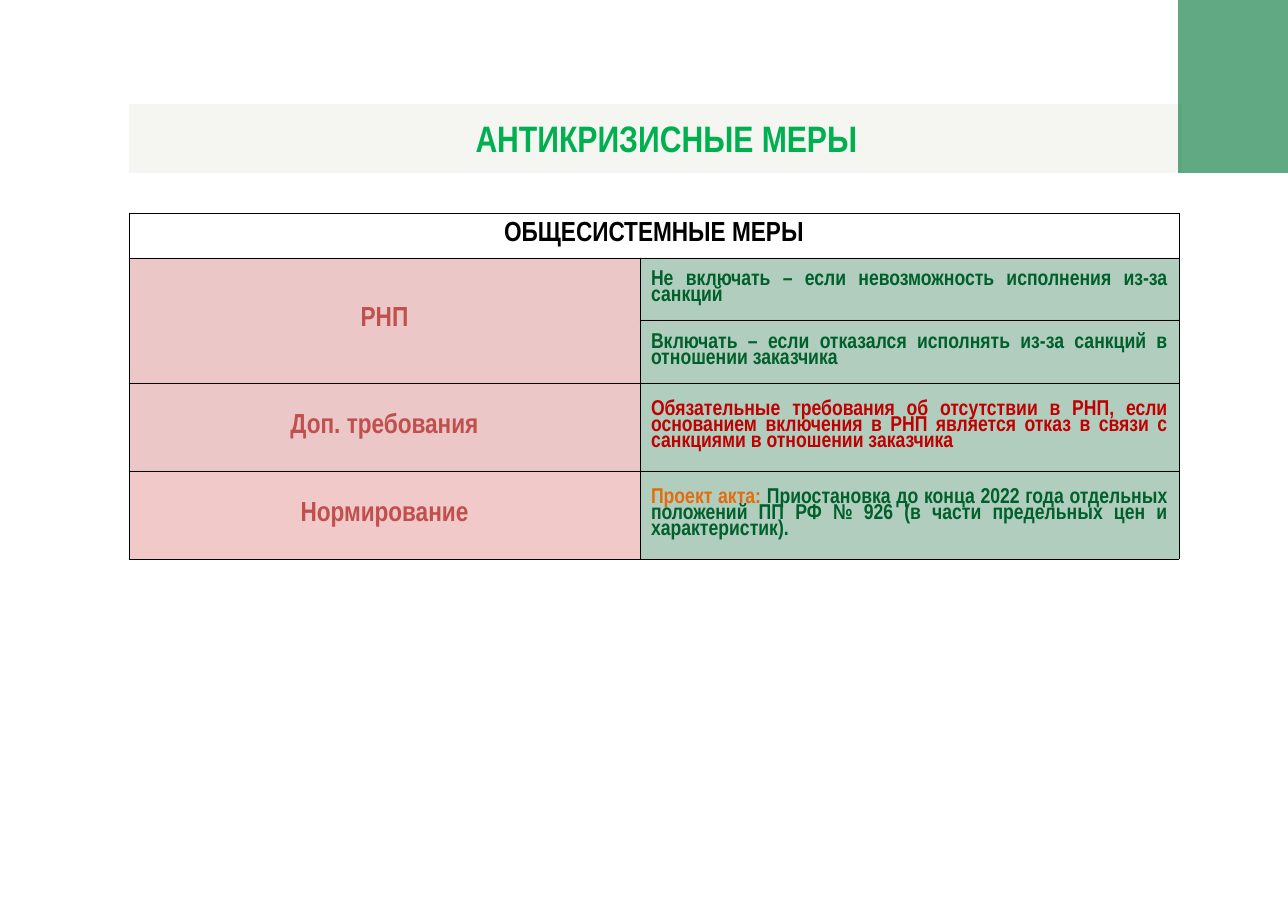
import dataclasses

import lxml.etree
import pptx
import pptx.dml.color
import pptx.enum.shapes
import pptx.enum.text
import pptx.oxml.ns
import pptx.util

ALIGN = pptx.enum.text.PP_ALIGN
qn = pptx.oxml.ns.qn


@dataclasses.dataclass(frozen=True)
class Theme:
    font: str = "Arial Narrow"
    title_size: int = 24
    label_size: int = 18
    body_size: int = 14
    border_width: float = 0.5
    line_spacing: float = 0.8
    black: str = "000000"
    band: str = "F5F6F1"
    title: str = "00B050"
    corner: str = "077A3E"
    label: str = "C0504D"
    body: str = "00602B"
    alert: str = "C00000"
    draft: str = "E46C0A"


class SlideBuilder:
    """Draws styled elements on the current slide, with lengths in px."""

    EMU_PER_PX = 8290

    def __init__(self, theme, width, height):
        self.theme = theme
        self.deck = pptx.Presentation()
        self.deck.slide_width = self.px(width)
        self.deck.slide_height = self.px(height)
        self.page = self.deck.slides.add_slide(self.deck.slide_layouts[6])

    def px(self, length):
        return pptx.util.Emu(length * self.EMU_PER_PX)

    def place(self, *lengths):
        return [self.px(length) for length in lengths]

    def paint(self, fill, properties, color, opacity):
        fill.solid()
        fill.fore_color.rgb = pptx.dml.color.RGBColor.from_string(color)
        if opacity < 100:
            tint = properties.find(qn("a:solidFill"))[0]
            alpha = lxml.etree.SubElement(tint, qn("a:alpha"))
            alpha.set("val", str(opacity * 1000))

    def rectangle(self, left, top, width, height, color, opacity=100):
        kind = pptx.enum.shapes.MSO_SHAPE.RECTANGLE
        box = self.page.shapes.add_shape(kind, *self.place(left, top, width, height))
        box.shadow.inherit = False
        box.line.fill.background()
        self.paint(box.fill, box.element.spPr, color, opacity)

    def fill_text(self, frame, spans, size, align, spacing=1.0):
        para = frame.paragraphs[0]
        para.alignment = align
        para.line_spacing = spacing
        for words, color in spans:
            span = para.add_run()
            span.text = words
            span.font.name = self.theme.font
            span.font.size = pptx.util.Pt(size)
            span.font.bold = True
            span.font.color.rgb = pptx.dml.color.RGBColor.from_string(color)

    def text(self, left, top, width, height, words, size, color):
        box = self.page.shapes.add_textbox(*self.place(left, top, width, height))
        box.text_frame.word_wrap = True
        self.fill_text(box.text_frame, [(words, color)], size, ALIGN.CENTER)

    def table(self, left, top, columns, rows):
        area = self.place(left, top, sum(columns), sum(rows))
        grid = self.page.shapes.add_table(len(rows), len(columns), *area).table
        grid.first_row = grid.horz_banding = False
        for column, width in zip(grid.columns, columns):
            column.width = self.px(width)
        for row, height in zip(grid.rows, rows):
            row.height = self.px(height)
        for cell in grid.iter_cells():
            self.border(cell)
            cell.fill.background()
        return grid

    def border(self, cell):
        properties = cell._tc.get_or_add_tcPr()
        for side in ("a:lnL", "a:lnR", "a:lnT", "a:lnB"):
            line = lxml.etree.SubElement(properties, qn(side))
            line.set("w", str(int(pptx.util.Pt(self.theme.border_width))))
            solid = lxml.etree.SubElement(line, qn("a:solidFill"))
            lxml.etree.SubElement(solid, qn("a:srgbClr")).set("val", self.theme.black)

    def cell(self, cell, spans, size, align, fill=None):
        cell.vertical_anchor = pptx.enum.text.MSO_ANCHOR.MIDDLE
        self.fill_text(cell.text_frame, spans, size, align, self.theme.line_spacing)
        if fill:
            self.paint(cell.fill, cell._tc.get_or_add_tcPr(), *fill)


def main():
    theme = Theme()
    slide = SlideBuilder(theme, 1288, 911)
    slide.rectangle(129, 104, 1053, 69, theme.band)
    slide.text(184, 110, 965, 55, "АНТИКРИЗИСНЫЕ МЕРЫ", theme.title_size, theme.title)
    slide.rectangle(1178, 0, 110, 173, theme.corner, 64)

    measures = slide.table(129, 213, [511, 539], [45, 62, 63, 88, 88])
    measures.cell(0, 0).merge(measures.cell(0, 1))
    measures.cell(1, 0).merge(measures.cell(2, 0))
    heading = [("ОБЩЕСИСТЕМНЫЕ МЕРЫ", theme.black)]
    slide.cell(measures.cell(0, 0), heading, theme.label_size, ALIGN.CENTER)

    labels = [
        (1, "РНП", (theme.label, 31)),
        (3, "Доп. требования", (theme.label, 31)),
        (4, "Нормирование", (theme.alert, 21)),
    ]
    for row, label, fill in labels:
        spans = [(label, theme.label)]
        slide.cell(measures.cell(row, 0), spans, theme.label_size, ALIGN.CENTER, fill)

    details = [
        [("Не включать – если невозможность исполнения из-за санкций", theme.body)],
        [("Включать – если отказался исполнять из-за санкций в отношении заказчика",
          theme.body)],
        [("Обязательные требования об отсутствии в РНП, если основанием включения "
          "в РНП является отказ в связи с санкциями в отношении заказчика", theme.alert)],
        [("Проект акта: ", theme.draft),
         ("Приостановка до конца 2022 года отдельных положений ПП РФ № 926 "
          "(в части предельных цен и характеристик).", theme.body)],
    ]
    for row, spans in enumerate(details, start=1):
        slide.cell(measures.cell(row, 1), spans, theme.body_size, ALIGN.JUSTIFY,
                   (theme.body, 31))

    slide.deck.save("out.pptx")


if __name__ == "__main__":
    main()
